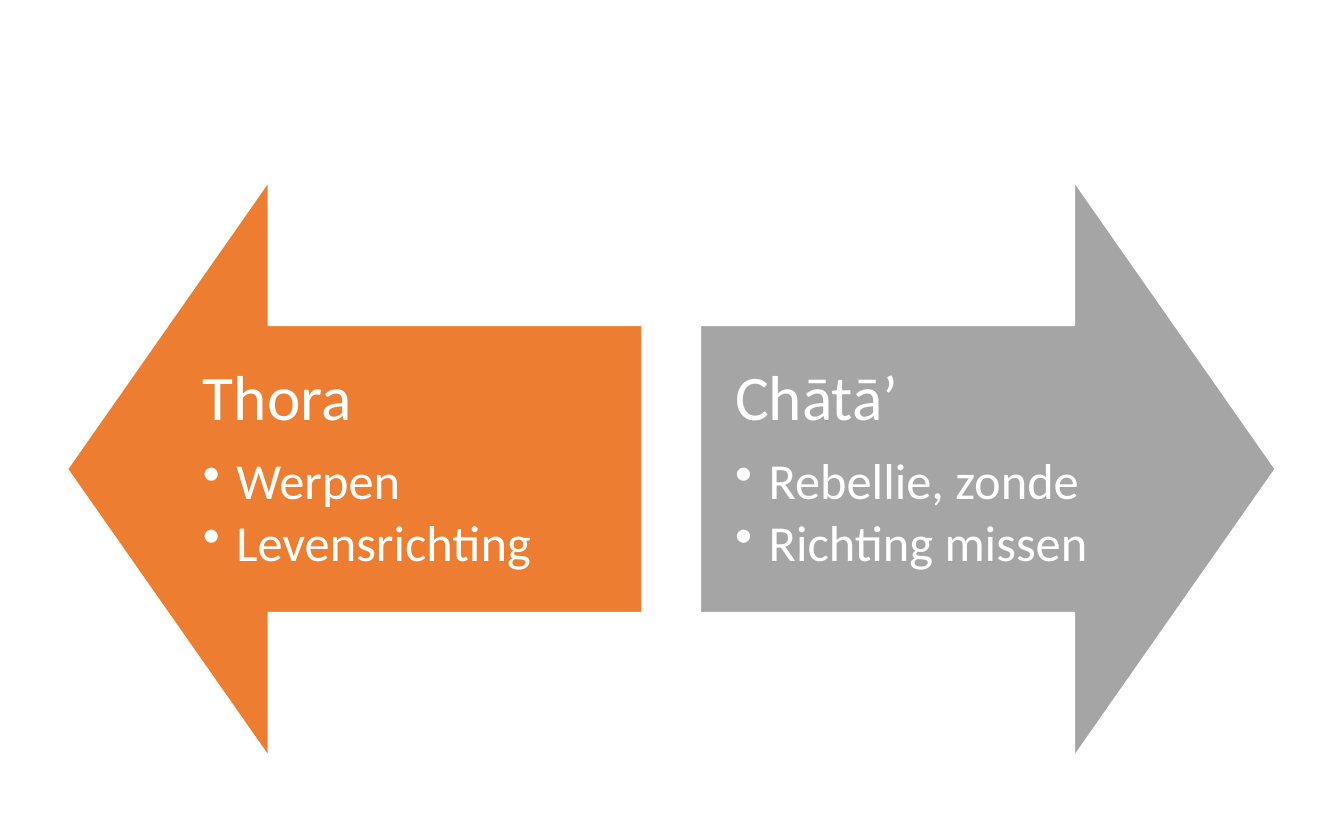
from pptx import Presentation
from pptx.dml.color import RGBColor
from pptx.enum.shapes import MSO_SHAPE as SHAPE
from pptx.enum.text import MSO_ANCHOR as ANCHOR
from pptx.oxml.ns import qn
from pptx.util import Pt
from lxml.etree import SubElement

PX = 9144  # 100 px to the inch
SLIDE_W, SLIDE_H = 1000, 625
ARROW, ARROW_TOP = 428, 135
TEXT_W, TEXT_H, INSET, INDENT = 353, 214, 26, 25
WHITE = "FFFFFF"

# Content: left, rotation, text offset, colour, heading, bullets
ARROWS = [
    (50, 270, ARROW - TEXT_W, "ED7D31", "Thora", ["Werpen", "Levensrichting"]),
    (521, 90, 0, "A5A5A5", "Chātā’", ["Rebellie, zonde", "Richting missen"]),
]
HEADING = {"size": Pt(34), "name": "Calibri"}
BULLET = {"size": Pt(27), "name": "Calibri"}


def px(*values):
    return [v * PX for v in values]


def color(hex_text):
    return RGBColor.from_string(hex_text)


def add_arrow(slide, left, rotation, fill):
    sp = slide.shapes.add_shape(SHAPE.UP_ARROW, *px(left, ARROW_TOP, ARROW, ARROW))
    sp.rotation = rotation
    sp.adjustments[0], sp.adjustments[1] = 0.5, 0.35
    sp.shadow.inherit = False
    sp.fill.solid()
    sp.fill.fore_color.rgb = color(fill)
    sp.line.color.rgb = color(WHITE)
    sp.line.width = Pt(1)


def add_line(p, text, font, space_after, bullet=False):
    if bullet:
        p.level = 1
        pPr = p._p.get_or_add_pPr()
        pPr.set("marL", str(INDENT * PX))
        pPr.set("indent", str(-INDENT * PX))
        SubElement(pPr, qn("a:buChar")).set("char", "•")
    p.line_spacing = 0.9
    p.space_after = Pt(space_after)
    r = p.add_run()
    r.text = text
    for name, value in font.items():
        setattr(r.font, name, value)
    r.font.color.rgb = color(WHITE)


def add_text(slide, left, heading, bullets):
    top = ARROW_TOP + (ARROW - TEXT_H) // 2
    tf = slide.shapes.add_textbox(*px(left, top, TEXT_W, TEXT_H)).text_frame
    tf.word_wrap = True
    tf.vertical_anchor = ANCHOR.MIDDLE
    for side in ("left", "top", "right", "bottom"):
        setattr(tf, f"margin_{side}", INSET * PX)
    add_line(tf.paragraphs[0], heading, HEADING, 12)
    for text in bullets:
        add_line(tf.add_paragraph(), text, BULLET, 4, bullet=True)


def main():
    prs = Presentation()
    prs.slide_width, prs.slide_height = px(SLIDE_W, SLIDE_H)
    slide = prs.slides.add_slide(prs.slide_layouts[6])
    # Opposed arrows, each with its upright text on the shaft
    for left, rotation, offset, fill, heading, bullets in ARROWS:
        add_arrow(slide, left, rotation, fill)
        add_text(slide, left + offset, heading, bullets)
    prs.save("out.pptx")


if __name__ == "__main__":
    main()
